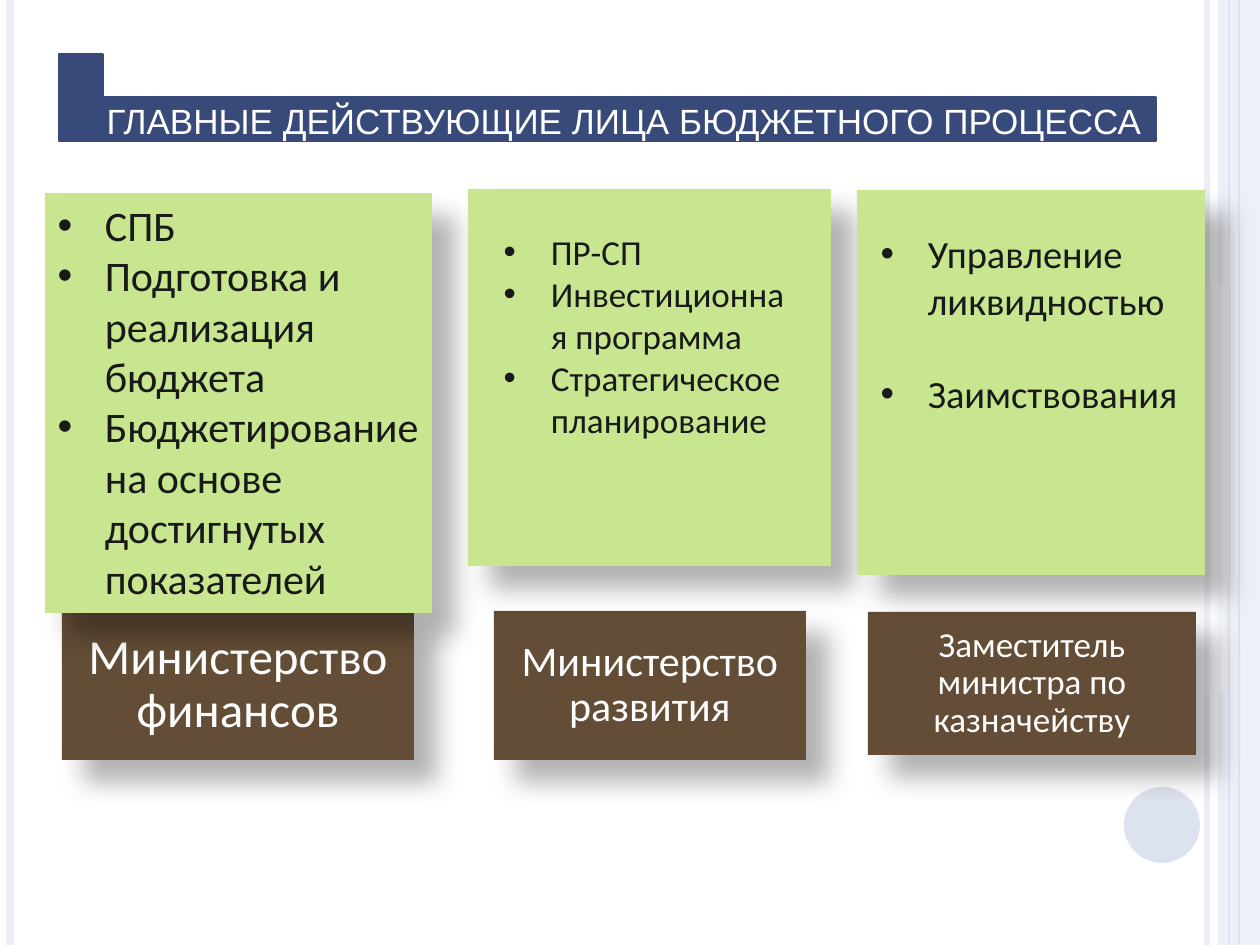
"""Build the slide on the main actors of the budget process."""
from lxml.etree import SubElement
from pptx import Presentation
from pptx.dml.color import RGBColor
from pptx.enum.shapes import MSO_CONNECTOR, MSO_SHAPE
from pptx.enum.text import MSO_ANCHOR, MSO_AUTO_SIZE, PP_ALIGN
from pptx.oxml import parse_xml
from pptx.oxml.ns import nsdecls, qn
from pptx.util import Pt

EMU_PER_PX = 914400 / 126
SHADOW = (
    f'<a:effectLst {nsdecls("a")}><a:outerShdw blurRad="190500" dist="228600" '
    'dir="2700000" rotWithShape="0"><a:srgbClr val="000000"><a:alpha val="30000"/>'
    "</a:srgbClr></a:outerShdw></a:effectLst>"
)


def color(value):
    return RGBColor.from_string(value)


def add_block(kind, box, fill, alpha=100, shadow=False):
    block = slide.shapes.add_shape(kind, *[round(n * EMU_PER_PX) for n in box])
    block.fill.solid()
    block.fill.fore_color.rgb = color(fill)
    block.line.fill.background()
    if shadow:
        block.element.spPr.append(parse_xml(SHADOW))
    else:
        block.shadow.inherit = False
    if alpha < 100:
        tint = block.element.spPr.find(qn("a:solidFill"))[0]
        SubElement(tint, qn("a:alpha")).set("val", str(alpha * 1000))
    return block


prs = Presentation()
prs.slide_width = round(1260 * EMU_PER_PX)
prs.slide_height = round(945 * EMU_PER_PX)
slide = prs.slides.add_slide(prs.slide_layouts[4])
title, *bodies = slide.placeholders
spare = bodies.pop().element
spare.getparent().remove(spare)

add_block(MSO_SHAPE.RECTANGLE, (1218, 0, 42, 945), "EBEEF6", alpha=87)
for x, weight, stripe_color in [
    (1207, 3, "EBEEF6"),
    (10, 4.5, "EBEEF6"),
    (1239, 1.5, "DDE2EF"),
    (1229, 0.75, "DDE2EF"),
]:
    left = round(x * EMU_PER_PX)
    stripe = slide.shapes.add_connector(MSO_CONNECTOR.STRAIGHT, left, 0, left, prs.slide_height)
    stripe.line.color.rgb = color(stripe_color)
    stripe.line.width = Pt(weight)
    SubElement(stripe.element.spPr, qn("a:effectLst"))
add_block(MSO_SHAPE.OVAL, (1124, 787, 76, 76), "DDE2EF")
add_block(MSO_SHAPE.RECTANGLE, (878, 286, 347, 407), "FFFFFF", alpha=40)

actors = [
    ("Министерство финансов", 28, 15, (62, 611, 352, 149), (45, 193, 387, 420),
     (45, 193, 387, 420), 24, 0,
     ["СПБ", "Подготовка и реализация бюджета",
      "Бюджетирование на основе достигнутых показателей"]),
    ("Министерство развития", 24, 13, (494, 611, 312, 149), (468, 189, 363, 377),
     (491, 224, 318, 224), 20, 0,
     ["ПР-СП", "Инвестиционная программа", "Стратегическое планирование"]),
    ("Заместитель министра по казначейству", 20, 10, (868, 612, 328, 143),
     (857, 190, 348, 385), (868, 224, 338, 199), 22, 27,
     ["Управление ликвидностью", "Заимствования"]),
]

for body, actor in zip(bodies, actors):
    name, name_size, inset, name_box, panel_box, duty_box, duty_size, gap, duties = actor

    label = add_block(MSO_SHAPE.RECTANGLE, name_box, "634D36", shadow=True).text_frame
    label.word_wrap = True
    label.vertical_anchor = MSO_ANCHOR.MIDDLE
    margin = round(inset * EMU_PER_PX)
    label.margin_left = label.margin_right = margin
    label.margin_top = label.margin_bottom = margin
    label.text = name
    caption = label.paragraphs[0]
    caption.alignment = PP_ALIGN.CENTER
    caption.line_spacing = 0.9
    caption.font.name = "Calibri"
    caption.font.size = Pt(name_size)
    caption.font.color.rgb = color("FFFFFF")

    add_block(MSO_SHAPE.RECTANGLE, panel_box, "C7E68F", shadow=True)
    body.left, body.top, body.width, body.height = [round(n * EMU_PER_PX) for n in duty_box]
    body.element.getparent().append(body.element)
    frame = body.text_frame
    frame.auto_size = MSO_AUTO_SIZE.NONE
    frame.vertical_anchor = MSO_ANCHOR.TOP
    frame.text = "\n".join(duties)
    for index, duty in enumerate(frame.paragraphs):
        props = duty._p.get_or_add_pPr()
        props.set("marL", "342900")
        props.set("indent", "-342900")
        SubElement(props, qn("a:buFont")).set("typeface", "Arial")
        SubElement(props, qn("a:buChar")).set("char", "•")
        duty.space_before = Pt(gap if index else 0)
        duty.font.name = "Calibri"
        duty.font.size = Pt(duty_size)
        duty.font.bold = False
        duty.font.color.rgb = color("191919")

banner = add_block(MSO_SHAPE.CORNER, (59, 54, 1097, 87), "384A79")
banner.line.color.rgb = color("384A79")
banner.line.width = Pt(1.25)

title.left, title.top, title.width, title.height = [
    round(n * EMU_PER_PX) for n in (94, 98, 1074, 44)
]
title.element.getparent().append(title.element)
heading = title.text_frame
heading.auto_size = MSO_AUTO_SIZE.NONE
heading.vertical_anchor = MSO_ANCHOR.MIDDLE
heading.margin_top = heading.margin_bottom = 0
heading.text = "ГЛАВНЫЕ ДЕЙСТВУЮЩИЕ ЛИЦА БЮДЖЕТНОГО ПРОЦЕССА"
headline = heading.paragraphs[0]
headline.alignment = PP_ALIGN.LEFT
headline.font.name = "Arial"
headline.font.size = Pt(20)
headline.font.color.rgb = color("FFFFFF")

prs.save("out.pptx")
